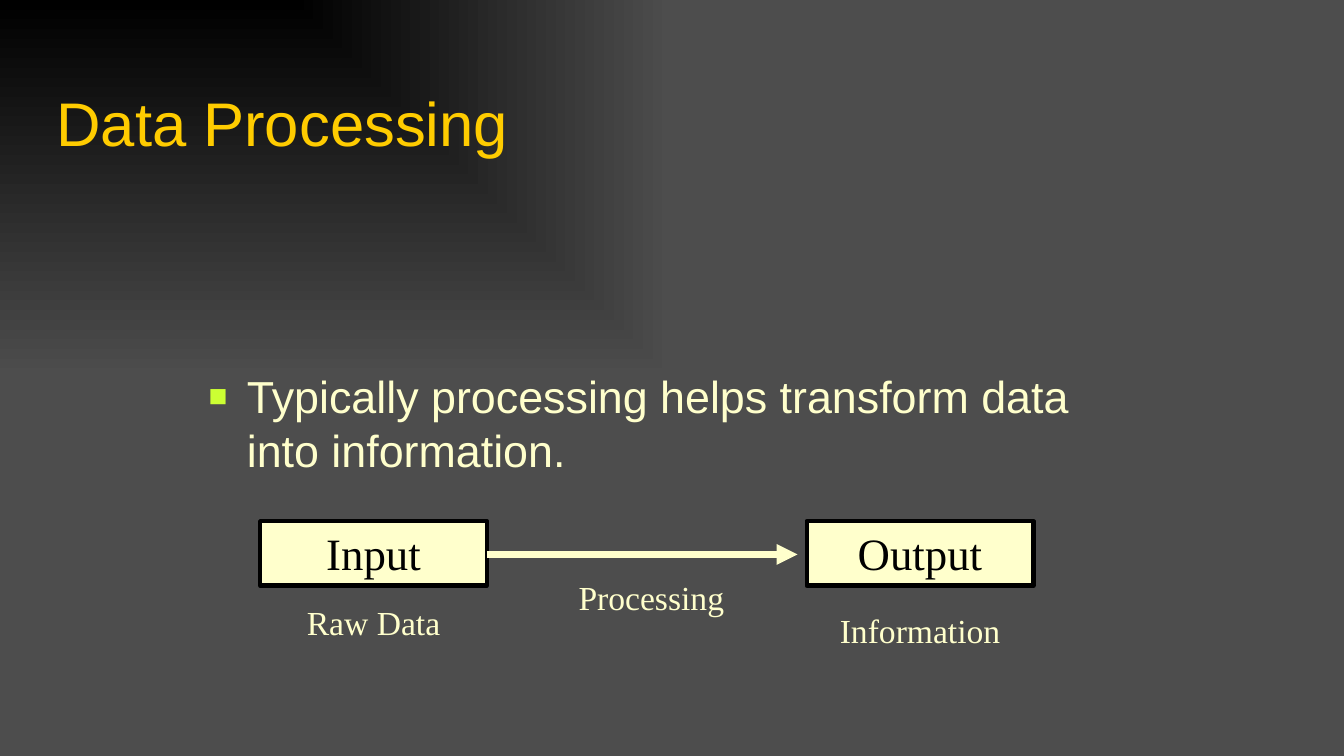
from dataclasses import dataclass
from lxml.etree import SubElement
from pptx import Presentation
from pptx.dml.color import RGBColor
from pptx.enum.shapes import MSO_CONNECTOR, MSO_SHAPE
from pptx.enum.text import MSO_ANCHOR, PP_ALIGN
from pptx.oxml.ns import qn
from pptx.util import Pt


@dataclass(frozen=True)
class Theme:
    black: str = "000000"
    gray: str = "4D4D4D"
    gold: str = "FFCC00"
    cream: str = "FFFFCC"
    lime: str = "CCFF33"
    sans: str = "Arial"
    serif: str = "Times New Roman"
    title: int = 44
    body: int = 32
    label: int = 24


THEME = Theme()
PX = 9144  # 100 px to the inch


def px(*vals):
    return [v * PX for v in vals]


def rgb(code):
    return RGBColor.from_string(code)


def write(shape, text, face, size, color, align=PP_ALIGN.LEFT):
    frame = shape.text_frame
    frame.word_wrap = True
    para = frame.paragraphs[0]
    para.text = text
    para.alignment = align
    font = para.font
    font.name, font.size, font.color.rgb = face, Pt(size), rgb(color)
    return frame


def paint_back(slide):
    fill = slide.background.fill
    fill.gradient()
    for stop, color in zip(fill.gradient_stops, (THEME.black, THEME.gray)):
        stop.color.rgb = rgb(color)
    grad = slide.background._cSld.find(".//" + qn("a:gradFill"))
    grad.remove(grad.find(qn("a:lin")))
    way = SubElement(grad, qn("a:path"), path="rect")
    SubElement(way, qn("a:fillToRect"), r="100000", b="100000")


def add_title(slide, box):
    shape = slide.shapes.add_textbox(*px(*box))
    frame = write(shape, "Data Processing", THEME.sans, THEME.title, THEME.gold)
    frame.vertical_anchor = MSO_ANCHOR.BOTTOM


def add_body(slide, box):
    shape = slide.shapes.add_textbox(*px(*box))
    frame = shape.text_frame
    frame.margin_top = 133 * PX
    # Square bullet with a hanging indent
    props = frame.paragraphs[0]._p.get_or_add_pPr()
    props.set("marL", str(38 * PX))
    props.set("indent", str(-38 * PX))
    tint = SubElement(props, qn("a:buClr"))
    SubElement(tint, qn("a:srgbClr"), val=THEME.lime)
    SubElement(props, qn("a:buSzPct"), val="70000")
    SubElement(props, qn("a:buFont"), typeface=THEME.sans)
    SubElement(props, qn("a:buChar"), char="■")
    write(shape, "Typically processing helps transform data into information.",
          THEME.sans, THEME.body, THEME.cream)


def add_node(slide, text, box):
    node = slide.shapes.add_shape(MSO_SHAPE.RECTANGLE, *px(*box))
    node.shadow.inherit = False
    node.fill.solid()
    node.fill.fore_color.rgb = rgb(THEME.cream)
    node.line.color.rgb = rgb(THEME.black)
    node.line.width = Pt(3)
    frame = write(node, text, THEME.serif, THEME.body, THEME.black, PP_ALIGN.CENTER)
    frame.vertical_anchor = MSO_ANCHOR.TOP


def add_label(slide, text, box):
    shape = slide.shapes.add_textbox(*px(*box))
    write(shape, text, THEME.serif, THEME.label, THEME.cream, PP_ALIGN.CENTER)


def add_arrow(slide, left, right, y):
    arrow = slide.shapes.add_connector(MSO_CONNECTOR.STRAIGHT, *px(left, y, right, y))
    arrow.line.color.rgb = rgb(THEME.cream)
    arrow.line.width = Pt(5)
    SubElement(arrow.line._get_or_add_ln(), qn("a:tailEnd"), type="triangle")
    SubElement(arrow._element.spPr, qn("a:effectLst"))


def add_flow(slide, box):
    left, top, width, _ = box
    wide, high = 225, 64
    last = left + width - wide
    # Nodes with their captions
    for x, name, note, drop in ((left, "Input", "Raw Data", 75),
                                (last, "Output", "Information", 83)):
        add_node(slide, name, (x, top, wide, high))
        add_label(slide, note, (x, top + drop, wide, 50))
    # Step between them
    add_arrow(slide, left + wide, last - 9, top + 33)
    add_label(slide, "Processing", (left + 267, top + 50, 242, 50))


def main():
    deck = Presentation()
    deck.slide_width, deck.slide_height = px(1333, 750)
    slide = deck.slides.add_slide(deck.slide_layouts[6])
    paint_back(slide)
    add_title(slide, (46, 79, 1259, 83))
    add_body(slide, (197, 233, 898, 433))
    add_flow(slide, (258, 517, 767, 133))
    deck.save("out.pptx")


if __name__ == "__main__":
    main()
